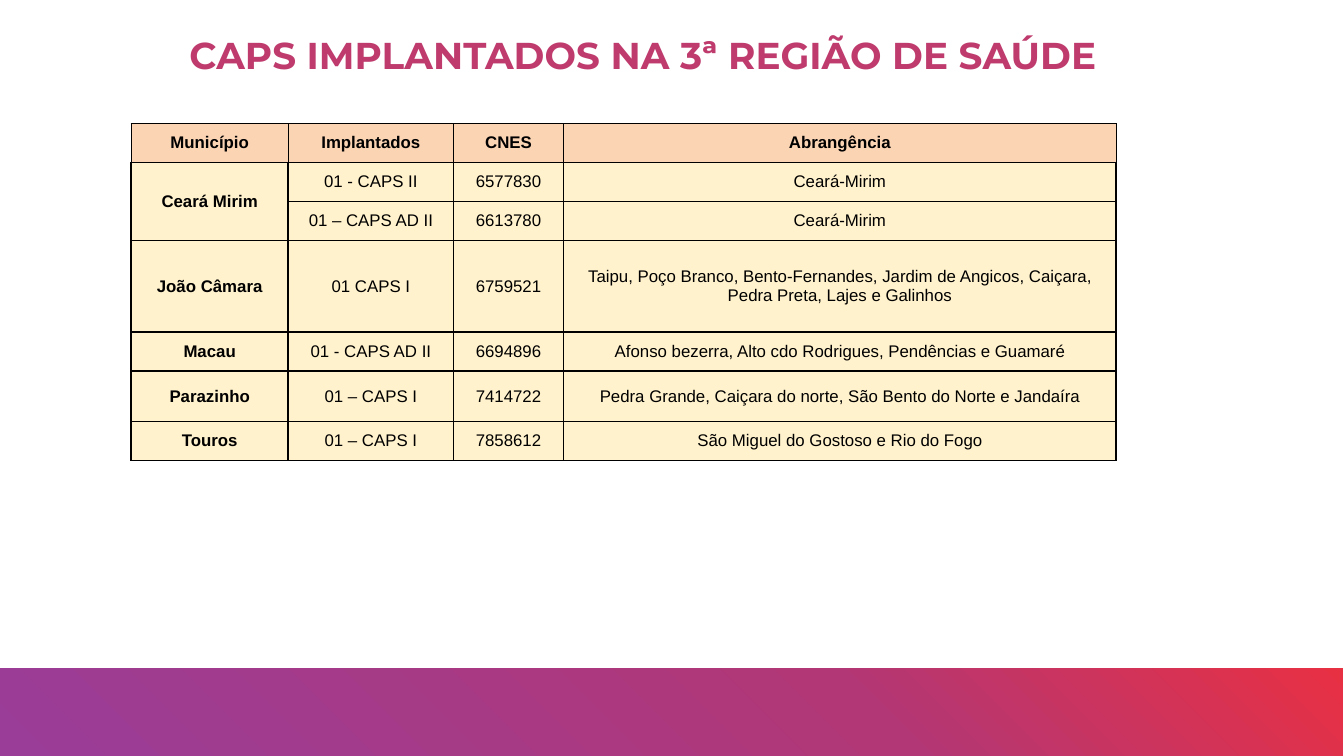
from copy import deepcopy
from dataclasses import dataclass

from pptx import Presentation
from pptx.dml.color import RGBColor
from pptx.enum.shapes import MSO_SHAPE
from pptx.enum.text import MSO_ANCHOR, PP_ALIGN
from pptx.oxml import parse_xml
from pptx.oxml.ns import nsdecls
from pptx.util import Pt

TITLE = "CAPS IMPLANTADOS NA 3ª REGIÃO DE SAÚDE"
HEADER = ("Município", "Implantados", "CNES", "Abrangência")
# An empty municipality continues the one above it.
CENTRES = [
    ("Ceará Mirim", "01 - CAPS II", "6577830", "Ceará-Mirim"),
    ("", "01 – CAPS AD II", "6613780", "Ceará-Mirim"),
    ("João Câmara", "01 CAPS I", "6759521",
     "Taipu, Poço Branco, Bento-Fernandes, Jardim de Angicos, Caiçara, "
     "Pedra Preta, Lajes e Galinhos"),
    ("Macau", "01 - CAPS AD II", "6694896",
     "Afonso bezerra, Alto cdo Rodrigues, Pendências e Guamaré"),
    ("Parazinho", "01 – CAPS I", "7414722",
     "Pedra Grande, Caiçara do norte, São Bento do Norte e Jandaíra"),
    ("Touros", "01 – CAPS I", "7858612", "São Miguel do Gostoso e Rio do Fogo"),
]
COLUMN_WIDTHS = (84.2, 88.5, 59, 296)
ROW_HEIGHT = 20.9
TALL_ROWS = {3: 49, 5: 27.1}


@dataclass(frozen=True)
class Theme:
    title_font: str = "Montserrat"
    table_font: str = "Arial"
    title_size: float = 20
    table_size: float = 9
    title: str = "BF3B6D"
    ink: str = "000000"
    header_fill: str = "FBD4B4"
    body_fill: str = "FFF2CC"
    band: tuple = ((0, "993D98"), (0.64, "B23776"), (1, "E83043"))


THEME = Theme()


def style_paragraph(para, font_name, size, color, bold):
    para.alignment = PP_ALIGN.CENTER
    para.font.name = font_name
    para.font.size = Pt(size)
    para.font.bold = bold
    para.font.color.rgb = RGBColor.from_string(color)


def add_band(page):
    band = page.shapes.add_shape(MSO_SHAPE.RECTANGLE, Pt(-0.5), Pt(358), Pt(720), Pt(47))
    band.shadow.inherit = False
    band.line.fill.background()
    band.fill.gradient()
    band.fill.gradient_angle = 45
    stop_list = band._element.spPr.find(".//{*}gsLst")
    stop_list.insert(1, deepcopy(stop_list[0]))
    for stop, (position, color) in zip(band.fill.gradient_stops, THEME.band):
        stop.position = position
        stop.color.rgb = RGBColor.from_string(color)


def add_title(page):
    box = page.shapes.add_textbox(Pt(21.6), Pt(7.9), Pt(645.8), Pt(24.5))
    frame = box.text_frame
    frame.word_wrap = True
    frame.vertical_anchor = MSO_ANCHOR.MIDDLE
    frame.margin_left = frame.margin_right = frame.margin_top = frame.margin_bottom = 0
    para = frame.paragraphs[0]
    para.text = TITLE
    para.line_spacing = 1.75
    style_paragraph(para, THEME.title_font, THEME.title_size, THEME.title, True)


def set_borders(cell, row):
    """Thin lines round the header, thicker ones round the body."""
    properties = cell._tc.get_or_add_tcPr()
    for side in "LRTB":
        thin = row == 0 or (row == 1 and side == "T")
        width = Pt(0.5 if thin else 1)
        properties.append(parse_xml(
            f'<a:ln{side} {nsdecls("a")} w="{width}"><a:solidFill>'
            f'<a:srgbClr val="{THEME.ink}"/></a:solidFill></a:ln{side}>'))


def fill_cell(cell, text, row, column):
    set_borders(cell, row)
    cell.fill.solid()
    color = THEME.header_fill if row == 0 else THEME.body_fill
    cell.fill.fore_color.rgb = RGBColor.from_string(color)
    cell.vertical_anchor = MSO_ANCHOR.MIDDLE
    cell.margin_left = cell.margin_right = cell.margin_top = cell.margin_bottom = Pt(5)
    para = cell.text_frame.paragraphs[0]
    para.text = text
    style_paragraph(para, THEME.table_font, THEME.table_size, THEME.ink,
                    row == 0 or column == 0)


def add_centres_table(page):
    rows = [HEADER, *CENTRES]
    heights = [TALL_ROWS.get(row, ROW_HEIGHT) for row in range(len(rows))]
    frame = page.shapes.add_table(len(rows), len(HEADER), Pt(70.2), Pt(66.2),
                                  Pt(sum(COLUMN_WIDTHS)), Pt(sum(heights)))
    table = frame.table
    for column, width in zip(table.columns, COLUMN_WIDTHS):
        column.width = Pt(width)
    for row, (texts, height) in enumerate(zip(rows, heights)):
        table.rows[row].height = Pt(height)
        for column, text in enumerate(texts):
            fill_cell(table.cell(row, column), text, row, column)
        if not texts[0]:
            table.cell(row - 1, 0).merge(table.cell(row, 0))


def main():
    deck = Presentation()
    deck.slide_width, deck.slide_height = Pt(720), Pt(405)
    page = deck.slides.add_slide(deck.slide_layouts[6])
    add_band(page)
    add_centres_table(page)
    add_title(page)
    deck.save("out.pptx")


if __name__ == "__main__":
    main()
